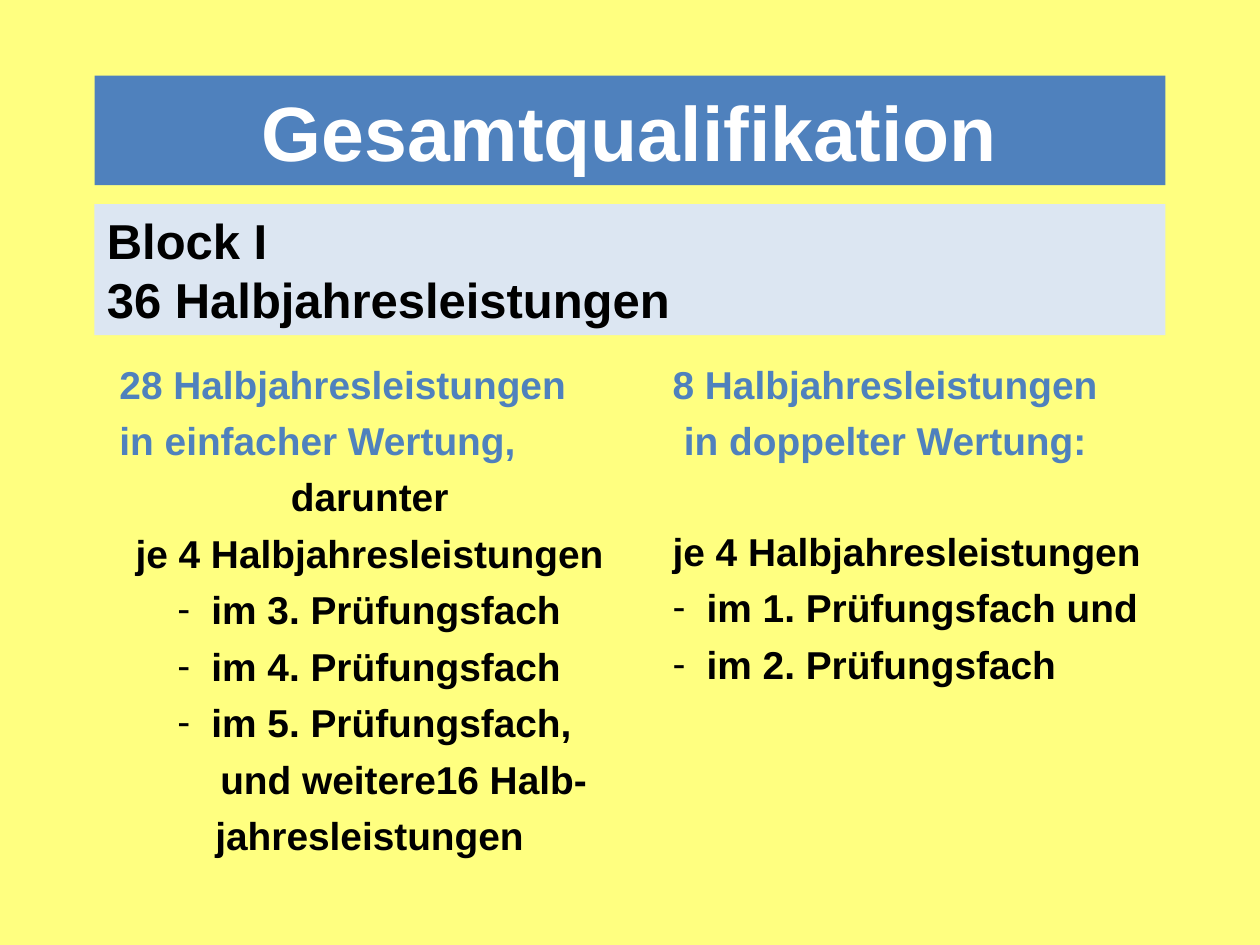
from pptx import Presentation
from pptx.dml.color import RGBColor
from pptx.enum.shapes import MSO_SHAPE
from pptx.enum.text import MSO_ANCHOR, PP_ALIGN
from pptx.util import Inches, Pt
from lxml.etree import SubElement
from pptx.oxml.ns import qn

BLUE = "4F81BD"
PALE_BLUE = "DCE6F2"
YELLOW = "FFFF80"
BLACK = "000000"
WHITE = "FFFFFF"

BODY_SIZE = 22.2
BODY_GAP = 5.6
EMPTY_LINE = 31.1
DASH_WIDTH = 0.27

LEFT_LINES = [
    ("28 Halbjahresleistungen", {"color": BLUE}),
    ("in einfacher Wertung,", {"color": BLUE}),
    ("darunter", {"align": PP_ALIGN.CENTER}),
    ("je 4 Halbjahresleistungen", {"align": PP_ALIGN.CENTER}),
    ("im 3. Prüfungsfach", {"indent": 0.46, "dash": True}),
    ("im 4. Prüfungsfach", {"indent": 0.46, "dash": True}),
    ("im 5. Prüfungsfach,", {"indent": 0.46, "dash": True}),
    ("und weitere16 Halb-", {"indent": 0.8}),
    ("jahresleistungen", {"align": PP_ALIGN.CENTER}),
]
RIGHT_LINES = [
    ("8 Halbjahresleistungen", {"color": BLUE}),
    ("in doppelter Wertung:", {"color": BLUE, "indent": 0.09}),
    ("je 4 Halbjahresleistungen", {"gap": BODY_GAP + EMPTY_LINE}),
    ("im 1. Prüfungsfach und", {"dash": True}),
    ("im 2. Prüfungsfach", {"dash": True}),
]


def rgb(value):
    """Turn a hex string into a colour."""
    return RGBColor.from_string(value)


def fill_solid(target, color):
    """Give a shape or background a plain fill."""
    target.fill.solid()
    target.fill.fore_color.rgb = rgb(color)


def place(shape, left, top, width, height):
    """Move and size a shape, in inches."""
    shape.left, shape.top = Inches(left), Inches(top)
    shape.width, shape.height = Inches(width), Inches(height)


def format_paragraph(paragraph, size, color, align=PP_ALIGN.LEFT):
    """Set the alignment and the font of a paragraph."""
    paragraph.alignment = align
    for run in paragraph.runs:
        run.font.name = "Arial"
        run.font.size = Pt(size)
        run.font.bold = True
        run.font.color.rgb = rgb(color)


def indent_paragraph(paragraph, indent, dash):
    """Indent a paragraph, hanging it behind a dash when asked."""
    hanging = DASH_WIDTH if dash else 0
    properties = paragraph._p.get_or_add_pPr()
    properties.set("marL", str(Inches(indent + hanging)))
    properties.set("indent", str(-Inches(hanging)))
    if dash:
        SubElement(properties, qn("a:buFont")).set("typeface", "Arial")
        SubElement(properties, qn("a:buChar")).set("char", "-")


def add_title(slide, text):
    """Fill the title placeholder as a blue banner."""
    title = slide.shapes.title
    place(title, 0.75, 0.6, 8.5, 0.87)
    fill_solid(title, BLUE)
    title.text_frame.text = text
    title.text_frame.vertical_anchor = MSO_ANCHOR.MIDDLE
    format_paragraph(title.text_frame.paragraphs[0], 44, WHITE, PP_ALIGN.CENTER)


def add_block_heading(slide, text):
    """Add the pale band that names the block."""
    band = slide.shapes.add_shape(
        MSO_SHAPE.RECTANGLE, Inches(0.75), Inches(1.62), Inches(8.5), Inches(1.04)
    )
    band.shadow.inherit = False
    band.line.fill.background()
    fill_solid(band, PALE_BLUE)
    band.text_frame.text = text
    band.text_frame.vertical_anchor = MSO_ANCHOR.TOP
    for paragraph in band.text_frame.paragraphs:
        format_paragraph(paragraph, 28, BLACK)


def add_column(slide, left, height, lines):
    """Add a text column with one paragraph per line."""
    column = slide.shapes.add_textbox(
        Inches(left), Inches(2.81), Inches(4.17), Inches(height)
    )
    frame = column.text_frame
    frame.word_wrap = True
    frame.text = "\n".join(text for text, _ in lines)
    for paragraph, (_, style) in zip(frame.paragraphs, lines):
        format_paragraph(
            paragraph,
            BODY_SIZE,
            style.get("color", BLACK),
            style.get("align", PP_ALIGN.LEFT),
        )
        paragraph.space_before = Pt(style.get("gap", BODY_GAP))
        indent_paragraph(paragraph, style.get("indent", 0), style.get("dash", False))


def main():
    """Build the slide and save it."""
    presentation = Presentation()
    presentation.slide_width, presentation.slide_height = Inches(10), Inches(7.5)
    slide = presentation.slides.add_slide(presentation.slide_layouts[5])
    fill_solid(slide.background, YELLOW)
    add_title(slide, "Gesamtqualifikation")
    add_column(slide, 0.85, 4.09, LEFT_LINES)
    add_column(slide, 5.24, 2.98, RIGHT_LINES)
    add_block_heading(slide, "Block I\n36 Halbjahresleistungen")
    presentation.save("out.pptx")


if __name__ == "__main__":
    main()
